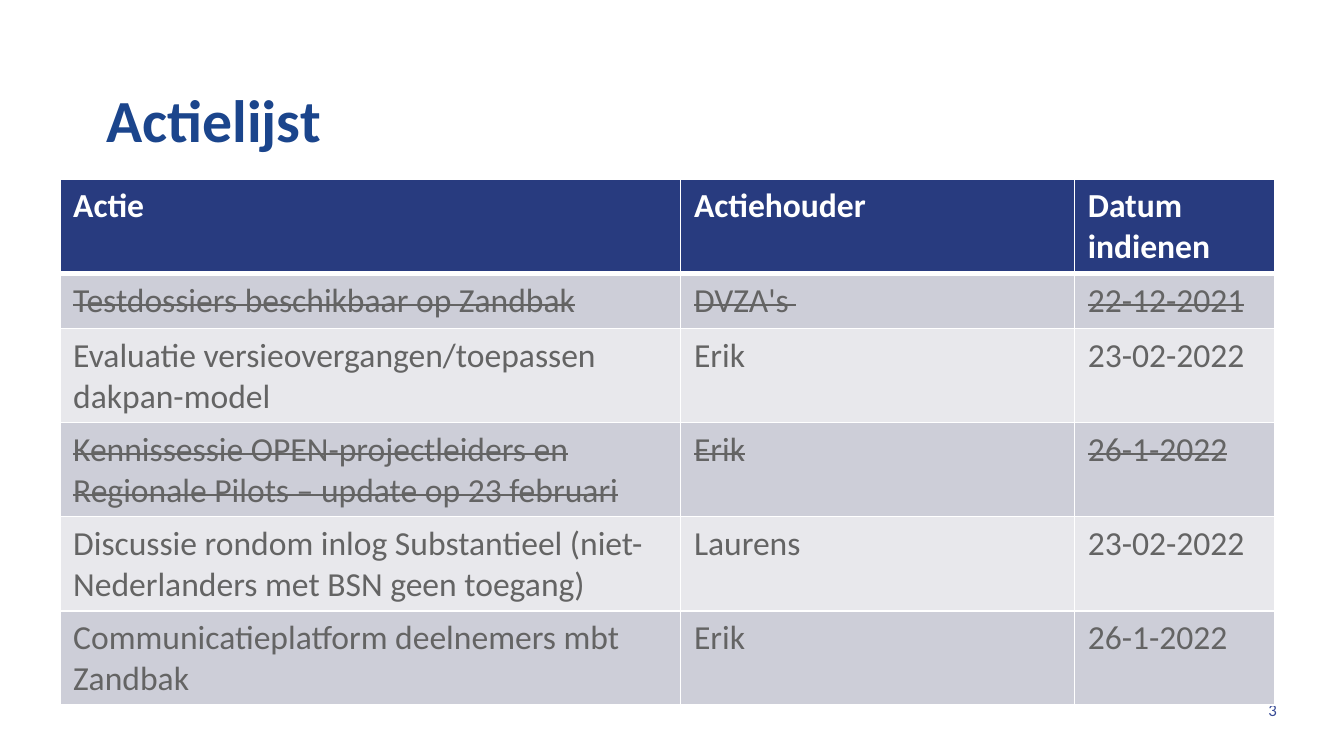
"""Build the action list slide with its table of actions, owners and dates."""
from lxml.etree import SubElement
from pptx import Presentation
from pptx.dml.color import RGBColor as Rgb
from pptx.enum.text import MSO_ANCHOR as Anchor, PP_ALIGN as Align
from pptx.oxml.ns import qn
from pptx.util import Pt

COLORS = {
    "title": "1B458C",
    "number": "384B96",
    "header": "283B7F",
    "body": "646464",
    "dark_band": "CDCED8",
    "light_band": "E8E8EC",
    "white": "FFFFFF",
}
COLUMN_WIDTHS = [332.6, 211, 107.3]
ROW_HEIGHTS = [36, 29.5, 36, 36.7, 36, 36]
HEADINGS = ["Actie", "Actiehouder", "Datum indienen"]
ACTIONS = [
    (["Testdossiers beschikbaar op Zandbak", "DVZA's ", "22-12-2021"], True),
    (["Evaluatie versieovergangen/toepassen dakpan-model", "Erik", "23-02-2022"], False),
    (["Kennissessie OPEN-projectleiders en Regionale Pilots – update op 23 februari",
      "Erik", "26-1-2022"], True),
    (["Discussie rondom inlog Substantieel (niet-Nederlanders met BSN geen toegang)",
      "Laurens", "23-02-2022"], False),
    (["Communicatieplatform deelnemers mbt \nZandbak ", "Erik", "26-1-2022"], False),
]


def write(frame, text, color, size, bold=False, struck=False, align=Align.LEFT):
    para = frame.paragraphs[0]
    para.text = text
    para.alignment = align
    for span in para.runs:
        for name, value in {"name": "Calibri", "size": Pt(size), "bold": bold}.items():
            setattr(span.font, name, value)
        span.font.color.rgb = Rgb.from_string(COLORS[color])
        if struck:
            span.font._element.set("strike", "sngStrike")


def add_text(page, place, text, color, size, anchor=Anchor.TOP, **style):
    box = page.shapes.add_textbox(*map(Pt, place))
    frame = box.text_frame
    settings = {"margin_left": 0, "margin_top": 0, "margin_right": 0,
                "margin_bottom": 0, "word_wrap": True, "vertical_anchor": anchor}
    for name, value in settings.items():
        setattr(frame, name, value)
    write(frame, text, color, size, **style)


def add_borders(cell, widths):
    properties = cell._tc.get_or_add_tcPr()
    for side, width in widths.items():
        line = SubElement(properties, qn(f"a:ln{side}"), w=str(int(Pt(width))))
        fill = SubElement(line, qn("a:solidFill"))
        SubElement(fill, qn("a:srgbClr"), val=COLORS["white"])


def fill_row(table, index, texts, band, color, bold=False, struck=False):
    widths = {"L": 1, "R": 1, "T": 3 if index == 1 else 1, "B": 3 if index == 0 else 1}
    for cell, text in zip(table.rows[index].cells, texts):
        write(cell.text_frame, text, color, 18, bold, struck)
        add_borders(cell, widths)
        cell.fill.solid()
        cell.fill.fore_color.rgb = Rgb.from_string(COLORS[band])


def add_action_table(page):
    table = page.shapes.add_table(
        len(ROW_HEIGHTS), len(COLUMN_WIDTHS), Pt(32), Pt(96),
        Pt(sum(COLUMN_WIDTHS)), Pt(sum(ROW_HEIGHTS))).table
    table.horz_banding = False
    for column, width in zip(table.columns, COLUMN_WIDTHS):
        column.width = Pt(width)
    for row, height in zip(table.rows, ROW_HEIGHTS):
        row.height = Pt(height)
    fill_row(table, 0, HEADINGS, "header", "white", bold=True)
    for index, (texts, done) in enumerate(ACTIONS, 1):
        band = "dark_band" if index % 2 else "light_band"
        fill_row(table, index, texts, band, "body", struck=done)


def main():
    deck = Presentation()
    deck.slide_width, deck.slide_height = Pt(720), Pt(405)
    page = deck.slides.add_slide(deck.slide_layouts[6])
    add_text(page, (653.8, 375, 30.2, 21.6), "3", "number", 9, align=Align.RIGHT)
    add_text(page, (57, 43.2, 568, 39.6), "Actielijst", "title", 32, Anchor.BOTTOM, bold=True)
    add_action_table(page)
    deck.save("out.pptx")


if __name__ == "__main__":
    main()
